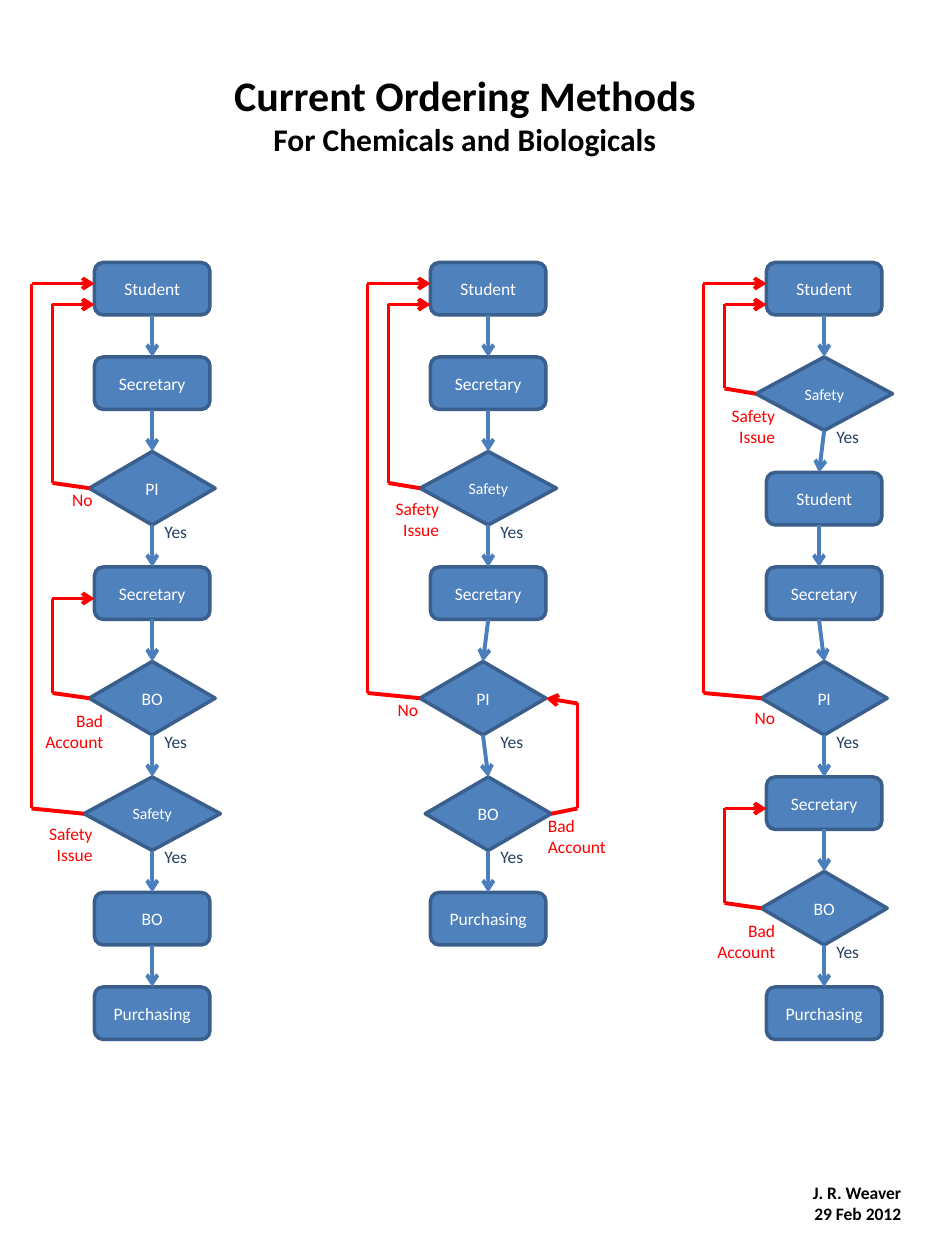
import pptx
import pptx.dml.color
import pptx.enum.shapes
import pptx.enum.text
import pptx.oxml.ns
import pptx.util
from lxml import etree

Inches = pptx.util.Inches
Pt = pptx.util.Pt
RGB = pptx.dml.color.RGBColor
KIND = pptx.enum.shapes.MSO_SHAPE
ALIGN = pptx.enum.text.PP_ALIGN
FIT = pptx.enum.text.MSO_AUTO_SIZE
qn = pptx.oxml.ns.qn

BLUE = RGB(0x4F, 0x81, 0xBD)
EDGE = RGB(0x3A, 0x5F, 0x8C)
FLOW = RGB(0x4B, 0x7E, 0xBC)
NAVY = RGB(0x25, 0x40, 0x61)
RED = RGB(0xFF, 0, 0)
WHITE = RGB(0xFF, 0xFF, 0xFF)
BLACK = RGB(0, 0, 0)

# Chart grid: twelfths of an inch
TOP, GAP = 25, 4
BOX = (11, 5)
GATES = {"PI": (12, 7), "BO": (12, 7), "Safety": (13, 7)}
LABELS = {"No": 5, "Yes": 5, "Safety\nIssue": 7, "Bad\nAccount": 8}


def grid(n):
    return Inches(n / 12)


class Chart:
    font = {"name": "Calibri", "size": Pt(10), "bold": False}

    def __init__(self, slide):
        self.slide = slide

    def words(self, frame, text, color, align, sizes=(), **extra):
        frame.text = text
        for i, para in enumerate(frame.paragraphs):
            para.alignment = align
            style = {**self.font, **extra}
            if sizes:
                style["size"] = Pt(sizes[i])
            for run in para.runs:
                for key, value in style.items():
                    setattr(run.font, key, value)
                run.font.color.rgb = color

    def step(self, kind, text, mid, top, size):
        wide, high = size
        shape = self.slide.shapes.add_shape(
            kind, grid(mid - wide / 2), grid(top), grid(wide), grid(high))
        shape.shadow.inherit = False
        shape.fill.solid()
        shape.fill.fore_color.rgb = BLUE
        shape.line.color.rgb = EDGE
        shape.line.width = Pt(2)
        points = Pt(9 if text == "Safety" else 10)
        self.words(shape.text_frame, text, WHITE, ALIGN.CENTER, size=points)

    def line(self, start, end, color, arrow=False):
        line = self.slide.shapes.add_connector(
            pptx.enum.shapes.MSO_CONNECTOR.STRAIGHT,
            *map(grid, start + end))
        line.line.color.rgb = color
        line.line.width = Pt(2.25)
        props = line._element.spPr
        if arrow:
            tail = etree.SubElement(props.find(qn("a:ln")), qn("a:tailEnd"))
            tail.set("type", "arrow")
        etree.SubElement(props, qn("a:effectLst"))

    def route(self, points, color):
        last = len(points) - 2
        for i, (start, end) in enumerate(zip(points, points[1:])):
            self.line(start, end, color, arrow=i == last)

    def text(self, text, box, color, align=ALIGN.RIGHT, wrap=True, **style):
        shape = self.slide.shapes.add_textbox(*map(Inches, box))
        frame = shape.text_frame
        frame.word_wrap = wrap
        frame.auto_size = FIT.SHAPE_TO_FIT_TEXT
        self.words(frame, text, color, align, **style)

    def label(self, text, x, y, color, align=ALIGN.RIGHT):
        high = 0.44 if "\n" in text else 0.27
        self.text(text, (x / 12, y / 12, LABELS[text] / 12, high), color, align)

    def flow(self, mid, steps, shifts, ports, loops):
        # Steps, one below the other
        top, spots = TOP, []
        for i, (name, is_gate) in enumerate(steps):
            size = GATES[name] if is_gate else BOX
            kind = (KIND.FLOWCHART_DECISION if is_gate
                    else KIND.FLOWCHART_ALTERNATE_PROCESS)
            x = mid + shifts.get(i, 0)
            self.step(kind, name, x, top, size)
            spots.append((x, top, size))
            if is_gate:
                self.label("Yes", mid - 0.5, top + size[1] - 1, NAVY)
            top += size[1] + GAP

        # Arrows down
        for i, (x, y, size) in enumerate(spots[:-1]):
            start = (x + ports.get(i, 0), y + size[1])
            below = spots[i + 1]
            end = (below[0] + ports.get(i + 1, 0), below[1])
            self.line(start, end, FLOW, arrow=True)

        # Loops back up on the left
        for i, lane, goal, text, x, y in loops:
            spot, head, (wide, high) = spots[i]
            turn, level = mid - lane, head + high / 2
            self.route([(spot - wide / 2, level), (turn, level - 0.5),
                        (turn, goal), (mid - BOX[0] / 2, goal)], RED)
            self.label(text, x, y, RED)


def steps(names):
    """Names ending in ? are decisions."""
    return [(name.rstrip("?"), name.endswith("?")) for name in names.split()]


def main():
    deck = pptx.Presentation()
    deck.slide_width, deck.slide_height = Inches(7.5), Inches(10)
    chart = Chart(deck.slides.add_slide(deck.slide_layouts[6]))
    near, far = 9.5, 11.5
    issue, bad = "Safety\nIssue", "Bad\nAccount"

    # Left flow
    chart.flow(
        14.5, steps("Student Secretary PI? Secretary BO? Safety? BO Purchasing"),
        {}, {},
        [(2, near, 29, "No", 5, 46), (4, near, 57, bad, 3, 67),
         (5, far, 27, issue, 3, 77.8)])

    # Middle flow, with one loop on the right
    chart.flow(
        46.5, steps("Student Secretary Safety? Secretary PI? BO? Purchasing"),
        {4: -0.5}, {},
        [(2, near, 29, issue, 36, 46.8), (4, far, 27, "No", 36, 66)])
    chart.route([(52.5, 77.5), (55, 77), (55, 67), (52, 66.5)], RED)
    chart.label(bad, 51, 77, RED, ALIGN.LEFT)

    # Right flow
    chart.flow(
        78.5, steps("Student Safety? Student Secretary PI? Secretary BO? Purchasing"),
        {}, {2: -0.5, 3: -0.5},
        [(1, near, 29, issue, 68, 38), (4, far, 27, "No", 70, 66.7),
         (6, near, 77, bad, 67, 87)])

    # Title and author
    chart.text("Current Ordering Methods\nFor Chemicals and Biologicals",
               (1.74, 0.5, 3.9, 0.81), BLACK, ALIGN.CENTER, wrap=False,
               sizes=(24, 18), bold=True)
    chart.text("J. R. Weaver\n29 Feb 2012", (5.92, 9.33, 1.33, 0.44), BLACK,
               bold=True)
    deck.save("out.pptx")


if __name__ == "__main__":
    main()
